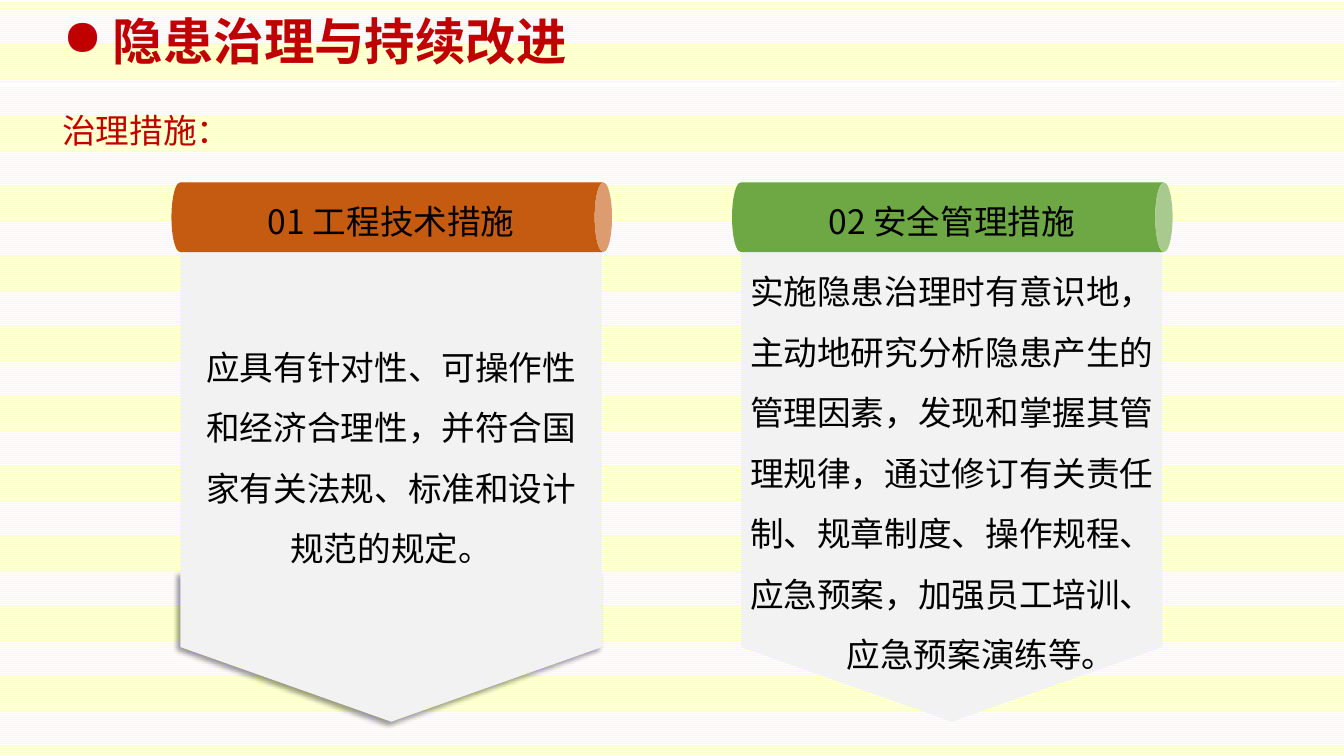
from lxml import etree
from pptx import Presentation
from pptx.dml.color import RGBColor
from pptx.enum.dml import MSO_PATTERN
from pptx.enum.shapes import MSO_CONNECTOR, MSO_SHAPE
from pptx.enum.text import MSO_ANCHOR, MSO_AUTO_SIZE, PP_ALIGN
from pptx.oxml.ns import qn
from pptx.util import Inches, Pt

STRIPES = MSO_PATTERN.LIGHT_HORIZONTAL
STRAIGHT = MSO_CONNECTOR.STRAIGHT
RECTANGLE, PENTAGON, CAN = MSO_SHAPE.RECTANGLE, MSO_SHAPE.PENTAGON, MSO_SHAPE.CAN
TOP, NO_FIT = MSO_ANCHOR.TOP, MSO_AUTO_SIZE.NONE
LEFT, CENTER = PP_ALIGN.LEFT, PP_ALIGN.CENTER

FONT = "Noto Sans CJK SC"
CREAM = RGBColor(0xFF, 0xFF, 0xCC)
WHITE = RGBColor(0xFF, 0xFF, 0xFF)
BLACK = RGBColor(0x00, 0x00, 0x00)
RED = RGBColor(0xC0, 0x00, 0x00)
PAPER = RGBColor(0xF2, 0xF2, 0xF2)
ORANGE = RGBColor(0xC5, 0x5A, 0x11)
GREEN = RGBColor(0x6E, 0xA8, 0x44)

CARD_LEFT, CARD_TOP, CARD_STEP, CARD_WIDTH = 1.79, 1.81, 5.56, 4.18
# Heading, colour, paragraphs, text offset from card top, text overhang,
# indent of the last paragraph, shadow under the point
CARDS = [
    ("01 工程技术措施", ORANGE,
     ["应具有针对性、可操作性和经济合理性，并符合国家有关法规、标准和设计规范的规定。"],
     1.38, 0, 0, True),
    ("02 安全管理措施", GREEN,
     ["实施隐患治理时有意识地，主动地研究分析隐患产生的管理因素，发现和掌握其管理规律，"
      "通过修订有关责任制、规章制度、操作规程、应急预案，加强员工培训、",
      "应急预案演练等。"],
     0.63, 0.1, 0.58, False),
]


def style_text(text_frame, size, color, align=LEFT, spacing=1.0, bold=False):
    text_frame.word_wrap = True
    text_frame.auto_size = NO_FIT
    text_frame.vertical_anchor = TOP
    for paragraph in text_frame.paragraphs:
        paragraph.alignment = align
        paragraph.line_spacing = spacing
        for run in paragraph.runs:
            run.font.size = Pt(size)
            run.font.bold = bold
            run.font.color.rgb = color
            run.font.name = FONT
            latin = run.font._element.find(qn("a:latin"))
            east_asian = etree.Element(qn("a:ea"), typeface=FONT)
            latin.addnext(east_asian)


def add_text(slide, box, text, color, align=LEFT):
    text_box = slide.shapes.add_textbox(*map(Inches, box))
    text_box.text_frame.text = text
    style_text(text_box.text_frame, 24, color, align, 1.5)
    return text_box


def add_block(slide, kind, box, color, rotated=False):
    """Fill the visible box; a rotated shape is turned by 90 degrees into it."""
    left, top, width, height = box
    if rotated:
        shift = (width - height) / 2
        left, top, width, height = left + shift, top - shift, height, width
    shape = slide.shapes.add_shape(kind, *map(Inches, (left, top, width, height)))
    shape.rotation = 90 if rotated else 0
    shape.shadow.inherit = False
    shape.fill.solid()
    shape.fill.fore_color.rgb = color
    shape.line.fill.background()
    return shape


def add_shadow(shape):
    effects = shape._element.spPr.find(qn("a:effectLst"))
    shadow = etree.SubElement(effects, qn("a:outerShdw"), blurRad=str(Pt(4)),
                              dist=str(Pt(3)), dir="8100000", algn="tr", rotWithShape="0")
    color = etree.SubElement(shadow, qn("a:srgbClr"), val=str(BLACK))
    etree.SubElement(color, qn("a:alpha"), val="40000")


def add_header(slide, box):
    left, top, width, height = box
    # Subtitle
    add_text(slide, (left, top + 0.79, 2.13, 0.64), "治理措施：", RED)

    # Bulleted title
    title = slide.shapes.title
    title.left, title.top, title.width, title.height = map(Inches, box)
    title.text_frame.text = "隐患治理与持续改进"
    properties = title.text_frame.paragraphs[0]._p.get_or_add_pPr()
    properties.set("marL", str(Inches(0.5)))
    properties.set("indent", str(Inches(-0.5)))
    etree.SubElement(properties, qn("a:buChar"), char="●")
    style_text(title.text_frame, 36, RED, bold=True)

    # Divider
    divider = slide.shapes.add_connector(
        STRAIGHT, 0, Inches(top + 0.79), Inches(13.3), Inches(top + 0.79))
    divider.line.color.rgb = WHITE
    divider.line.width = Pt(3)
    etree.SubElement(divider._element.spPr, qn("a:effectLst"))


def add_card(slide, left, top, width, card):
    heading, color, paragraphs, text_offset, overhang, last_indent, shadowed = card
    # Pointed foot, sheet and roll
    foot = add_block(slide, PENTAGON, (left, top + 3.87, width, 1.48), PAPER, True)
    if shadowed:
        add_shadow(foot)
    add_block(slide, RECTANGLE, (left, top, width, 3.88), PAPER)
    add_block(slide, CAN, (left - 0.09, top, width + 0.19, 0.69), color, True)

    # Heading and body text
    add_text(slide, (left + (width - 2.89) / 2, top - 0.07, 2.89, 0.64),
             heading, BLACK, CENTER)
    body = add_text(
        slide, (left - overhang, top + text_offset, width + 2 * overhang, 4.93 - text_offset),
        "\n".join(paragraphs), BLACK, CENTER)
    if last_indent:
        last = body.text_frame.paragraphs[-1]._p.get_or_add_pPr()
        last.set("marL", str(Inches(last_indent)))
        last.set("indent", "0")


def main():
    presentation = Presentation()
    presentation.slide_width = Inches(13.33)
    presentation.slide_height = Inches(7.5)
    slide = presentation.slides.add_slide(presentation.slide_layouts[5])

    # Striped background
    background = slide.background.fill
    background.patterned()
    background.pattern = STRIPES
    background.fore_color.rgb = CREAM
    background.back_color.rgb = WHITE

    add_header(slide, (0.52, 0.05, 5.58, 0.71))
    for index, card in enumerate(CARDS):
        add_card(slide, CARD_LEFT + index * CARD_STEP, CARD_TOP, CARD_WIDTH, card)
    presentation.save("out.pptx")


if __name__ == "__main__":
    main()
